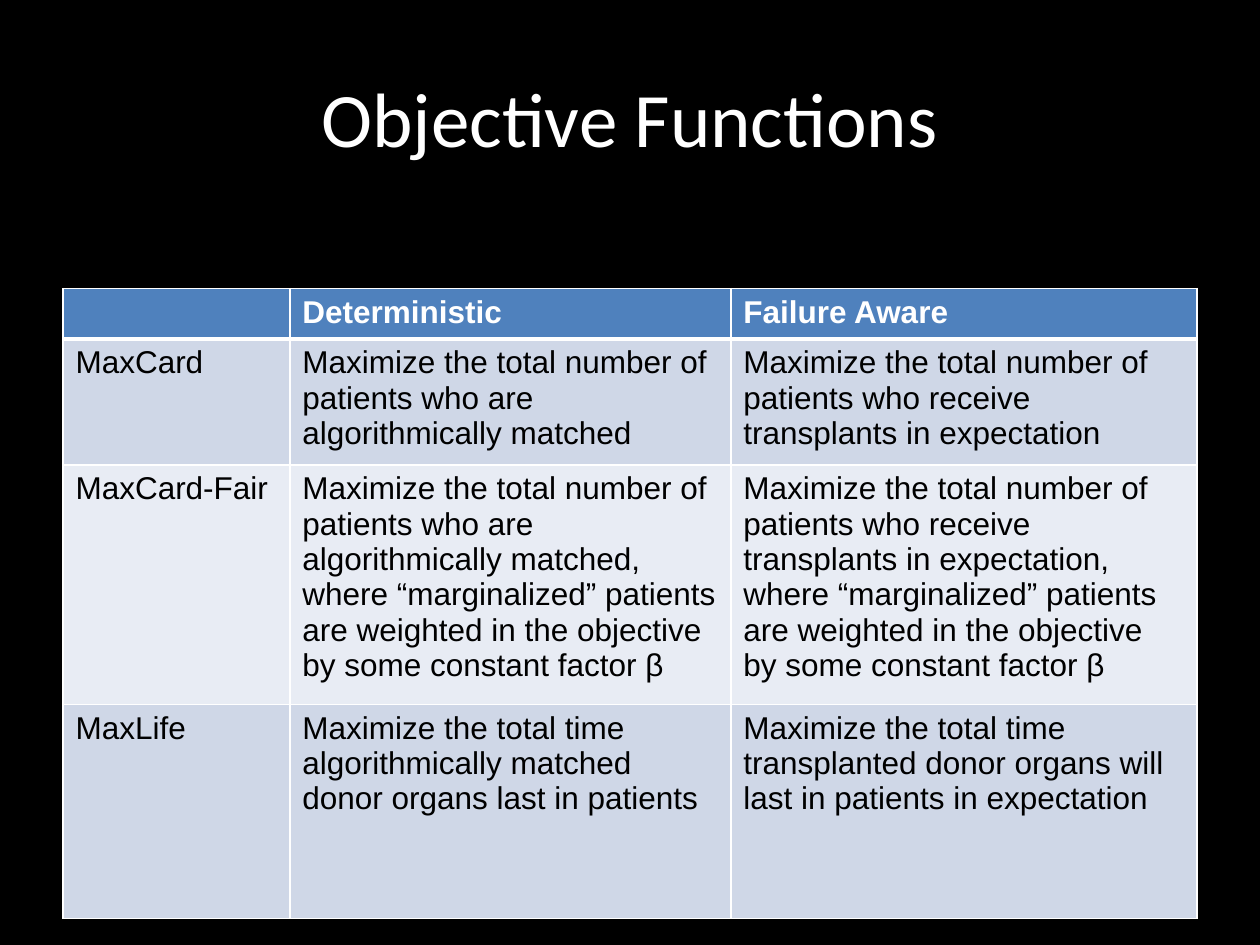
from lxml.etree import SubElement
from pptx import Presentation
from pptx.dml.color import RGBColor
from pptx.enum.text import MSO_ANCHOR, PP_ALIGN
from pptx.oxml.ns import qn
from pptx.util import Inches, Pt

BLACK = RGBColor(0x00, 0x00, 0x00)
WHITE = RGBColor(0xFF, 0xFF, 0xFF)
HEADER_BLUE = RGBColor(0x4F, 0x81, 0xBD)
BAND_DARK = RGBColor(0xCF, 0xD7, 0xE7)
BAND_LIGHT = RGBColor(0xE8, 0xEC, 0xF4)

COLUMN_WIDTHS = (1.8, 3.5, 3.7)
ROW_HEIGHTS = (0.39, 0.94, 1.79, 1.7)
OBJECTIVES = (
    ("", "Deterministic", "Failure Aware"),
    (
        "MaxCard",
        "Maximize the total number of patients who are algorithmically matched",
        "Maximize the total number of patients who receive transplants in expectation",
    ),
    (
        "MaxCard-Fair",
        "Maximize the total number of patients who are algorithmically matched, "
        "where “marginalized” patients are weighted in the objective "
        "by some constant factor β",
        "Maximize the total number of patients who receive transplants in expectation, "
        "where “marginalized” patients are weighted in the objective "
        "by some constant factor β",
    ),
    (
        "MaxLife",
        "Maximize the total time algorithmically matched donor organs last in patients",
        "Maximize the total time transplanted donor organs will last "
        "in patients in expectation",
    ),
)


def write_text(frame, text, *, size, font, color, bold=False, align=PP_ALIGN.LEFT):
    paragraph = frame.paragraphs[0]
    paragraph.alignment = align
    paragraph.font.size = Pt(size)
    if text:
        run = paragraph.add_run()
        run.text = text
        run.font.size = Pt(size)
        run.font.name = font
        run.font.bold = bold
        run.font.color.rgb = color


def set_borders(cell, bottom_width, top_width):
    properties = cell._tc.get_or_add_tcPr()
    widths = {"a:lnL": 1, "a:lnR": 1, "a:lnT": top_width, "a:lnB": bottom_width}
    for side, width in widths.items():
        border = SubElement(properties, qn(side), w=str(Pt(width)))
        fill = SubElement(border, qn("a:solidFill"))
        SubElement(fill, qn("a:srgbClr"), val=str(WHITE))


def add_title(slide, left, top, width, height):
    title = slide.shapes.add_textbox(left, top, width, height)
    frame = title.text_frame
    frame.word_wrap = True
    frame.vertical_anchor = MSO_ANCHOR.MIDDLE
    write_text(frame, "Objective Functions", size=44, font="Calibri",
               color=WHITE, align=PP_ALIGN.CENTER)


def add_objectives(slide, left, top, width, height):
    table = slide.shapes.add_table(
        len(ROW_HEIGHTS), len(COLUMN_WIDTHS), left, top, width, height
    ).table
    for column, share in zip(table.columns, COLUMN_WIDTHS):
        column.width = int(width * share / sum(COLUMN_WIDTHS))
    for row, share in zip(table.rows, ROW_HEIGHTS):
        row.height = int(height * share / sum(ROW_HEIGHTS))
    for index, (row, texts) in enumerate(zip(table.rows, OBJECTIVES)):
        is_header = index == 0
        band = BAND_DARK if index % 2 else BAND_LIGHT
        for cell, text in zip(row.cells, texts):
            set_borders(cell, bottom_width=3 if is_header else 1,
                        top_width=3 if index == 1 else 1)
            cell.fill.solid()
            cell.fill.fore_color.rgb = HEADER_BLUE if is_header else band
            write_text(cell.text_frame, text, size=18, font="Arial",
                       color=WHITE if is_header else BLACK, bold=is_header)


def main():
    presentation = Presentation()
    presentation.slide_width = Inches(10)
    presentation.slide_height = Inches(7.5)
    slide = presentation.slides.add_slide(presentation.slide_layouts[6])
    slide.background.fill.solid()
    slide.background.fill.fore_color.rgb = BLACK
    add_title(slide, Inches(0.5), Inches(0.3), Inches(9), Inches(1.25))
    add_objectives(slide, Inches(0.5), Inches(2.29), Inches(9), Inches(4.82))
    presentation.save("out.pptx")


if __name__ == "__main__":
    main()
